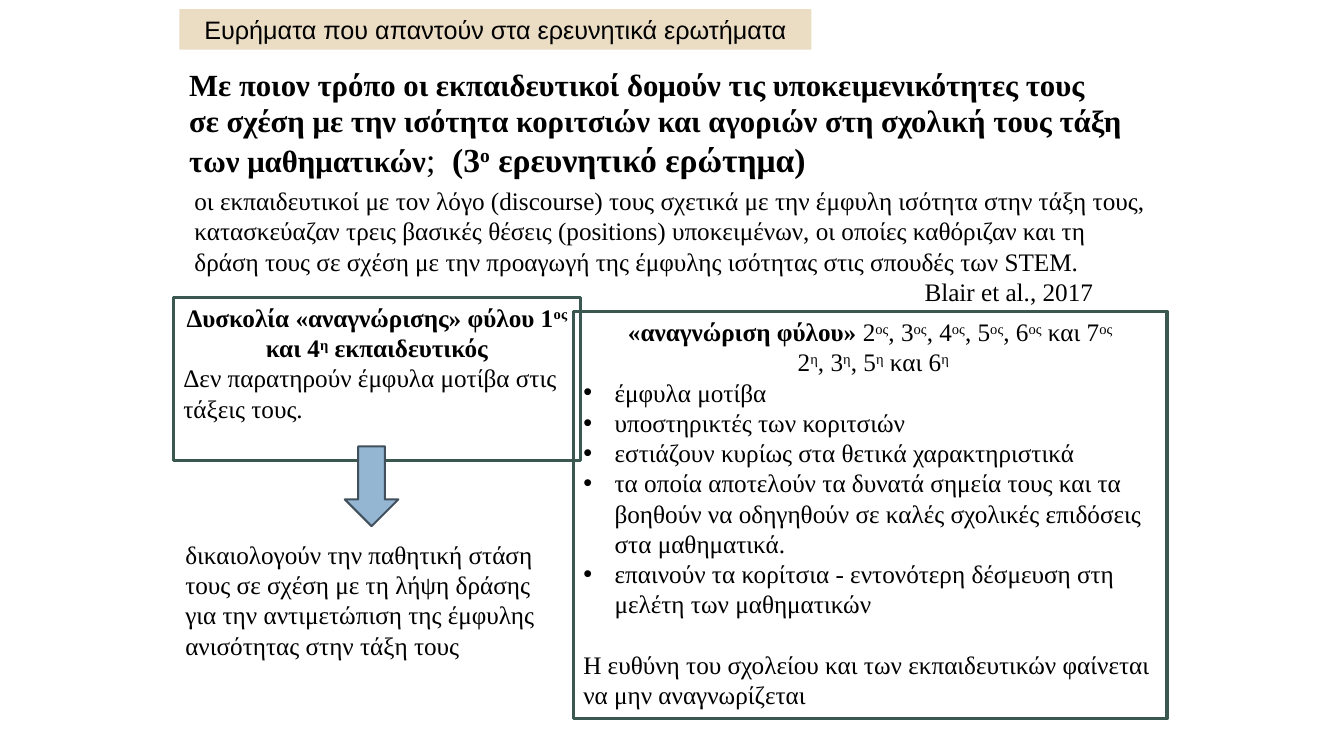
from pptx import Presentation
from pptx.dml.color import RGBColor
from pptx.enum.shapes import MSO_SHAPE
from pptx.enum.text import MSO_ANCHOR, PP_ALIGN
from pptx.oxml import parse_xml
from pptx.oxml.ns import nsdecls
from pptx.util import Cm, Pt

BLACK = RGBColor(0x00, 0x00, 0x00)
SAND = RGBColor(0xEB, 0xDD, 0xC3)
GREEN = RGBColor(0x3A, 0x57, 0x50)
BLUE = RGBColor(0x94, 0xB6, 0xD2)
SLATE = RGBColor(0x41, 0x50, 0x5C)
SERIF = "Times New Roman"
SANS = "Arial"
BULLET_INDENT = Cm(0.79)


def add_box(page, left, top, width, height, fill=None, line=None, line_width=2.25,
            kind=MSO_SHAPE.RECTANGLE):
    """Add a shape, measured in centimetres, with optional fill and outline."""
    box = page.shapes.add_shape(kind, Cm(left), Cm(top), Cm(width), Cm(height))
    box.shadow.inherit = False
    if fill is None:
        box.fill.background()
    else:
        box.fill.solid()
        box.fill.fore_color.rgb = fill
    if line is None:
        box.line.fill.background()
    else:
        box.line.color.rgb = line
        box.line.width = Pt(line_width)
    box.text_frame.word_wrap = True
    box.text_frame.vertical_anchor = MSO_ANCHOR.TOP
    return box


def add_text(page, left, top, width, height):
    """Add a wrapping text box, measured in centimetres."""
    box = page.shapes.add_textbox(Cm(left), Cm(top), Cm(width), Cm(height))
    box.text_frame.word_wrap = True
    return box


def write(para, markup, size=18, font=SERIF):
    """Append text in which * toggles bold and ^ toggles superscript."""
    para.alignment = para.alignment or PP_ALIGN.LEFT
    for bold_index, part in enumerate(markup.split("*")):
        for raised_index, text in enumerate(part.split("^")):
            if not text:
                continue
            span = para.add_run()
            span.text = text
            span.font.name = font
            span.font.size = Pt(size)
            span.font.bold = bold_index % 2 == 1
            span.font.color.rgb = BLACK
            if raised_index % 2:
                span.font._element.set("baseline", "30000")


def add_bullet(para):
    """Give a paragraph a hanging round bullet."""
    properties = para._p.get_or_add_pPr()
    properties.set("marL", str(BULLET_INDENT))
    properties.set("indent", str(-BULLET_INDENT))
    properties.append(parse_xml(f'<a:buFont {nsdecls("a")} typeface="Arial"/>'))
    properties.append(parse_xml(f'<a:buChar {nsdecls("a")} char="•"/>'))


def add_heading(page, left, top):
    """Place the section banner and the research question below it."""
    banner = add_box(page, left, top, 15.93, 1.02, fill=SAND)
    write(banner.text_frame.paragraphs[0],
          "Ευρήματα που απαντούν στα ερευνητικά ερωτήματα", font=SANS)
    question = add_text(page, left, top + 1.29, 24, 3.18).text_frame.paragraphs[0]
    write(question, "*Με ποιον τρόπο οι εκπαιδευτικοί δομούν τις υποκειμενικότητες τους "
          "σε σχέση με την ισότητα κοριτσιών και αγοριών στη σχολική τους τάξη "
          "των μαθηματικών*", 22)
    write(question, ";*  (3^ο^ ερευνητικό ερώτημα)*", 24)


def add_summary(page, left, top, width, height):
    """Place the summary of the finding with its citation."""
    frame = add_text(page, left, top, width, height).text_frame
    write(frame.paragraphs[0],
          "οι εκπαιδευτικοί με τον λόγο (discourse) τους σχετικά με την έμφυλη ισότητα "
          "στην τάξη τους, κατασκεύαζαν τρεις βασικές θέσεις (positions) υποκειμένων, "
          "οι οποίες καθόριζαν και τη δράση τους σε σχέση με την προαγωγή της έμφυλης "
          "ισότητας στις σπουδές των STEM.")
    citation = frame.add_paragraph()
    citation._p.get_or_add_pPr().set("marL", str(Cm(18.4)))
    write(citation, "Blair et al., 2017")


def add_difficulty(page, left, top, width, height):
    """Place the difficulty box, its arrow and the resulting stance."""
    frame = add_box(page, left, top, width, height, line=GREEN).text_frame
    write(frame.paragraphs[0],
          "*Δυσκολία «αναγνώρισης» φύλου 1^ος^ και 4^η^ εκπαιδευτικός*")
    write(frame.add_paragraph(), "Δεν παρατηρούν έμφυλα μοτίβα στις τάξεις τους.")
    stance = add_text(page, left + 0.05, top + 5.97, 9.88, 3.33).text_frame
    write(stance.paragraphs[0],
          "δικαιολογούν την παθητική στάση τους σε σχέση με τη λήψη δράσης "
          "για την αντιμετώπιση της έμφυλης ανισότητας στην τάξη τους")
    add_box(page, left + 4.32, top + 3.76, 1.35, 2.01, BLUE, SLATE, 1.5,
            MSO_SHAPE.DOWN_ARROW)


def add_recognition(page, left, top, width, height):
    """Place the recognition box with its bullets and conclusion."""
    frame = add_box(page, left, top, width, height, line=GREEN).text_frame
    title = frame.paragraphs[0]
    teachers = frame.add_paragraph()
    title.alignment = teachers.alignment = PP_ALIGN.CENTER
    write(title, "*«αναγνώριση φύλου»* 2^ος^, 3^ος^, 4^ος^, 5^ος^, 6^ος^ και 7^ος^")
    write(teachers, " 2^η^, 3^η^, 5^η^ και 6^η^")
    for finding in (
        "έμφυλα μοτίβα",
        "υποστηρικτές των κοριτσιών",
        "εστιάζουν κυρίως στα θετικά χαρακτηριστικά",
        "τα οποία αποτελούν τα δυνατά σημεία τους και τα βοηθούν να οδηγηθούν "
        "σε καλές σχολικές επιδόσεις στα μαθηματικά.",
        "επαινούν τα κορίτσια - εντονότερη δέσμευση στη μελέτη των μαθηματικών",
    ):
        para = frame.add_paragraph()
        add_bullet(para)
        write(para, finding)
    conclusion = frame.add_paragraph()
    conclusion.space_before = Pt(21.6)
    write(conclusion, "Η ευθύνη του σχολείου και των εκπαιδευτικών φαίνεται "
          "να μην αναγνωρίζεται")


def main():
    """Build and save the slide."""
    deck = Presentation()
    deck.slide_width, deck.slide_height = Cm(33.87), Cm(19.05)
    page = deck.slides.add_slide(deck.slide_layouts[6])
    add_heading(page, 4.52, 0.23)
    add_summary(page, 4.65, 4.55, 24.54, 3.33)
    add_difficulty(page, 4.37, 7.49, 10.26, 4.11)
    add_recognition(page, 14.45, 7.85, 14.96, 10.26)
    deck.save("out.pptx")


if __name__ == "__main__":
    main()
